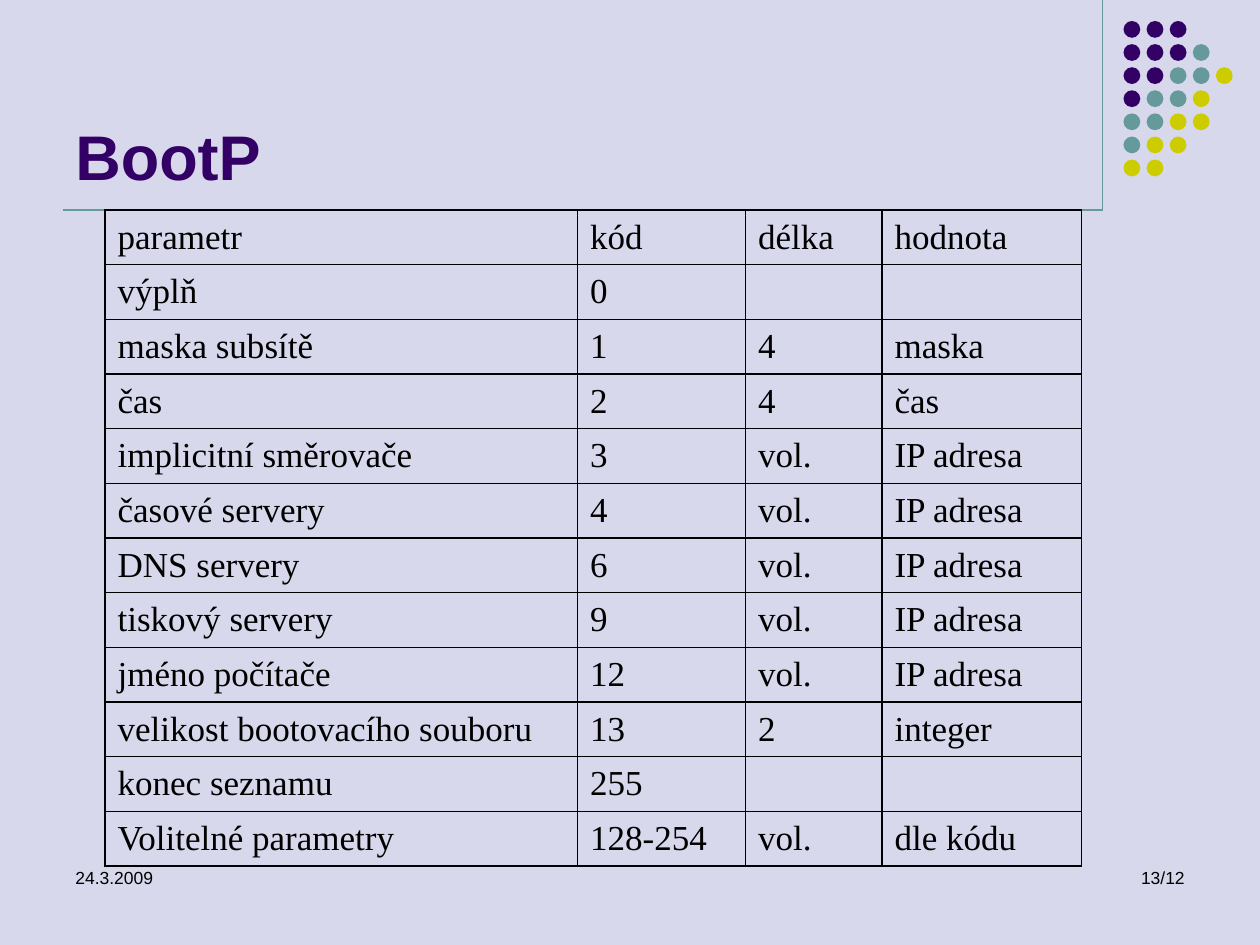
from dataclasses import dataclass

from lxml import etree
from pptx import Presentation
from pptx.dml.color import RGBColor
from pptx.enum.shapes import MSO_CONNECTOR, MSO_SHAPE
from pptx.enum.text import MSO_ANCHOR, PP_ALIGN
from pptx.oxml.ns import qn
from pptx.util import Inches, Pt

LEFT, RIGHT = PP_ALIGN.LEFT, PP_ALIGN.RIGHT
TOP, MIDDLE, BOTTOM = MSO_ANCHOR.TOP, MSO_ANCHOR.MIDDLE, MSO_ANCHOR.BOTTOM
STRAIGHT, OVAL = MSO_CONNECTOR.STRAIGHT, MSO_SHAPE.OVAL


@dataclass(frozen=True)
class Theme:
    background: str = "D8D8EC"
    purple: str = "330066"
    teal: str = "669999"
    yellow: str = "CCCC00"
    ink: str = "000000"
    heading_font: str = "Arial"
    table_font: str = "Times New Roman"
    title_size: int = 36
    table_size: int = 20
    footer_size: int = 10
    rule_width: float = 0.75
    border_width: float = 1


THEME = Theme()

# The slide is a grid of 120 columns by 90 rows, twelve to the inch
COLUMNS, ROWS = 120, 90
RULE_X, RULE_Y, MARGIN = 105, 20, 6

DOT_COLOURS = {"P": THEME.purple, "T": THEME.teal, "Y": THEME.yellow}
DOT_ROWS = ["PPP", "PPPT", "PPTTY", "PTTY", "TTYY", "TYY", "YY"]
DOT_LEFT, DOT_TOP, DOT_PITCH, DOT_SIZE = 107, 2, 2.2, 1.6

TABLE_LEFT, TABLE_TOP, ROW_HEIGHT = 10, 20, 5.2
TABLE_COLUMNS = [45, 16, 13, 19]
PARAMETERS = [
    ("parametr", "kód", "délka", "hodnota"),
    ("výplň", "0", "", ""),
    ("maska subsítě", "1", "4", "maska"),
    ("čas", "2", "4", "čas"),
    ("implicitní směrovače", "3", "vol.", "IP adresa"),
    ("časové servery", "4", "vol.", "IP adresa"),
    ("DNS servery", "6", "vol.", "IP adresa"),
    ("tiskový servery", "9", "vol.", "IP adresa"),
    ("jméno počítače", "12", "vol.", "IP adresa"),
    ("velikost bootovacího souboru", "13", "2", "integer"),
    ("konec seznamu", "255", "", ""),
    ("Volitelné parametry", "128-254", "vol.", "dle kódu"),
]


def grid(*units):
    return [Inches(unit / 12) for unit in units]


def colour(value):
    return RGBColor.from_string(value)


def style_text(para, font, size, ink, bold=False):
    for span in para.runs:
        span.font.name = font
        span.font.size = Pt(size)
        span.font.color.rgb = colour(ink)
        span.font.bold = bold


def add_rule(page, *ends):
    rule = page.shapes.add_connector(STRAIGHT, *grid(*ends))
    rule.line.color.rgb = colour(THEME.teal)
    rule.line.width = Pt(THEME.rule_width)
    etree.SubElement(rule._element.spPr, qn("a:effectLst"))


def add_dots(page):
    for row, codes in enumerate(DOT_ROWS):
        for column, code in enumerate(codes):
            dot = page.shapes.add_shape(OVAL, *grid(
                DOT_LEFT + column * DOT_PITCH, DOT_TOP + row * DOT_PITCH,
                DOT_SIZE, DOT_SIZE))
            dot.shadow.inherit = False
            dot.fill.solid()
            dot.fill.fore_color.rgb = colour(DOT_COLOURS[code])
            dot.line.fill.background()


def add_text(page, text, place, size, ink, align=LEFT, anchor=TOP, bold=False):
    box = page.shapes.add_textbox(*grid(*place))
    frame = box.text_frame
    frame.word_wrap = True
    frame.vertical_anchor = anchor
    frame.text = text
    para = frame.paragraphs[0]
    para.alignment = align
    style_text(para, THEME.heading_font, size, ink, bold)


def add_borders(cell):
    properties = cell._tc.get_or_add_tcPr()
    for position, side in enumerate(("a:lnL", "a:lnR", "a:lnT", "a:lnB")):
        line = etree.Element(qn(side), w=str(Pt(THEME.border_width)))
        fill = etree.SubElement(line, qn("a:solidFill"))
        etree.SubElement(fill, qn("a:srgbClr"), val=THEME.ink)
        properties.insert(position, line)


def fill_cell(cell, text):
    cell.fill.background()
    cell.vertical_anchor = MIDDLE
    cell.text_frame.text = text
    para = cell.text_frame.paragraphs[0]
    # Hanging indent
    indent = Inches(0.38)
    properties = para._p.get_or_add_pPr()
    properties.set("marL", str(indent))
    properties.set("indent", str(-indent))
    style_text(para, THEME.table_font, THEME.table_size, THEME.ink)
    add_borders(cell)


def add_parameter_table(page):
    place = grid(TABLE_LEFT, TABLE_TOP, sum(TABLE_COLUMNS),
                 ROW_HEIGHT * len(PARAMETERS))
    table = page.shapes.add_table(
        len(PARAMETERS), len(TABLE_COLUMNS), *place).table
    table.first_row = table.horz_banding = False
    for column, width in zip(table.columns, grid(*TABLE_COLUMNS)):
        column.width = width
    for row, texts in zip(table.rows, PARAMETERS):
        row.height = grid(ROW_HEIGHT)[0]
        for cell, text in zip(row.cells, texts):
            fill_cell(cell, text)


def main():
    deck = Presentation()
    deck.slide_width, deck.slide_height = grid(COLUMNS, ROWS)
    page = deck.slides.add_slide(deck.slide_layouts[6])
    page.background.fill.solid()
    page.background.fill.fore_color.rgb = colour(THEME.background)

    # Corner decoration
    add_rule(page, RULE_X, 0, RULE_X, RULE_Y)
    add_dots(page)
    add_rule(page, MARGIN, RULE_Y, RULE_X, RULE_Y)

    # Footer
    add_text(page, "24.3.2009", (MARGIN, 82, 28, 6),
             THEME.footer_size, THEME.ink)
    add_text(page, "13/12", (COLUMNS - MARGIN - 28, 82, 28, 6),
             THEME.footer_size, THEME.ink, align=RIGHT)

    # Title and table
    add_text(page, "BootP", (MARGIN, 2, RULE_X - MARGIN, 17),
             THEME.title_size, THEME.purple, anchor=BOTTOM, bold=True)
    add_parameter_table(page)

    deck.save("out.pptx")


if __name__ == "__main__":
    main()
